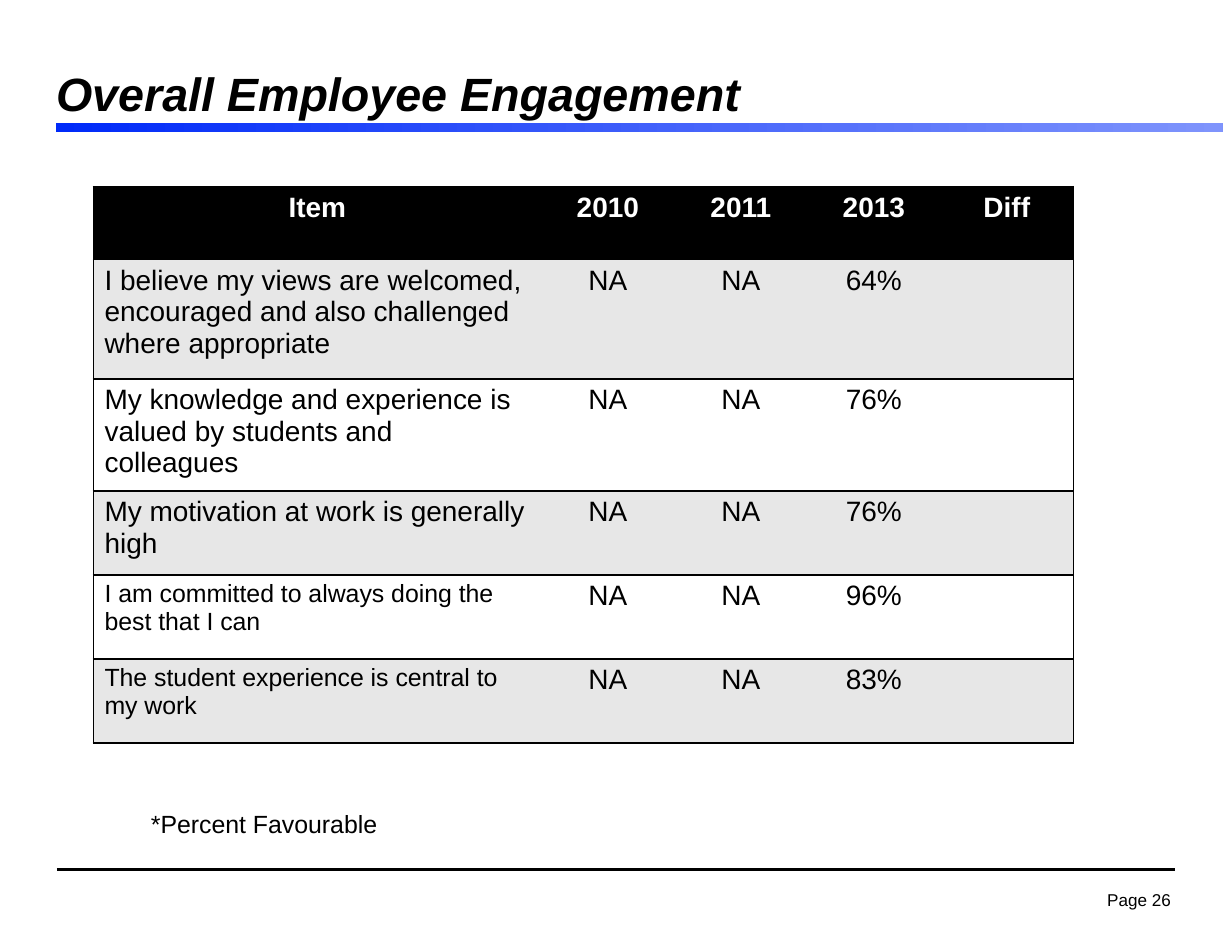
from lxml.etree import SubElement
from pptx import Presentation
from pptx.dml.color import RGBColor
from pptx.enum.shapes import MSO_CONNECTOR, MSO_SHAPE
from pptx.enum.text import MSO_ANCHOR, PP_ALIGN
from pptx.oxml import parse_xml
from pptx.oxml.ns import nsdecls, qn
from pptx.util import Inches, Pt

FONT = "Arial"
COLORS = {
    "black": "000000",
    "white": "FFFFFF",
    "band": "E7E7E7",
    "bar_start": "002AF9",
    "bar_end": "7F94FC",
}
HEADER = ["Item", "2010", "2011", "2013", "Diff"]
# Item, text size, 2013 result
ITEMS = [
    ("I believe my views are welcomed, encouraged and also challenged where appropriate", 18, "64%"),
    ("My knowledge and experience is valued by students and colleagues", 18, "76%"),
    ("My motivation at work is generally high", 18, "76%"),
    ("I am committed to always doing the best that I can", 16, "96%"),
    ("The student experience is central to my work", 16, "83%"),
]
COLUMN_WIDTHS = [48] + [14.25] * 4
ROW_HEIGHTS = [7.8, 12.8, 11.3] + [9] * 3


def grid(*steps):
    """Lengths on a grid with twelve steps to the inch."""
    return [Inches(step / 12) for step in steps]


def color(name):
    return RGBColor.from_string(COLORS[name])


def add_run(paragraph, text, size, color_name="black", bold=False, italic=False):
    run = paragraph.add_run()
    run.text = text
    font = run.font
    font.name, font.size = FONT, Pt(size)
    font.bold, font.italic = bold, italic
    font.color.rgb = color(color_name)


def set_title(slide, text):
    title = slide.shapes.title
    title.left, title.top, title.width, title.height = grid(6, 8, 124, 5)
    frame = title.text_frame
    frame.margin_left = frame.margin_right = frame.margin_top = frame.margin_bottom = 0
    frame.vertical_anchor = MSO_ANCHOR.BOTTOM
    frame.word_wrap = False
    paragraph = frame.paragraphs[0]
    paragraph.alignment = PP_ALIGN.LEFT
    add_run(paragraph, text, 30, bold=True, italic=True)


def add_title_bar(slide):
    bar = slide.shapes.add_shape(MSO_SHAPE.RECTANGLE, *grid(6, 13.2, 125, 1))
    bar.shadow.inherit = False
    bar.line.fill.background()
    bar.fill.gradient()
    bar.fill.gradient_angle = 0
    for stop, name in zip(bar.fill.gradient_stops, ("bar_start", "bar_end")):
        stop.color.rgb = color(name)


def add_footer_line(slide):
    line = slide.shapes.add_connector(MSO_CONNECTOR.STRAIGHT, *grid(6.1, 93.2, 125.9, 93.2))
    line.line.color.rgb = color("black")
    line.line.width = Pt(2)
    SubElement(line._element.spPr, qn("a:effectLst"))


def add_text(slide, box, text, size, alignment=PP_ALIGN.LEFT, wrap=True, spacing=1.0):
    frame = slide.shapes.add_textbox(*grid(*box)).text_frame
    frame.word_wrap = wrap
    paragraph = frame.paragraphs[0]
    paragraph.alignment = alignment
    paragraph.line_spacing = spacing
    add_run(paragraph, text, size)
    return frame


def set_borders(cell, visible_sides):
    properties = cell._tc.get_or_add_tcPr()
    for index, side in enumerate("LRTB"):
        paint = "<a:noFill/>"
        if side in visible_sides:
            paint = f'<a:solidFill><a:srgbClr val="{COLORS["black"]}"/></a:solidFill>'
        border = parse_xml(f'<a:ln{side} {nsdecls("a")} w="{Pt(1)}">{paint}</a:ln{side}>')
        properties.insert(index, border)


def fill_cell(cell, text, size, fill, text_color, alignment, bold):
    cell.fill.solid()
    cell.fill.fore_color.rgb = color(fill)
    if text:
        paragraph = cell.text_frame.paragraphs[0]
        paragraph.alignment = alignment
        add_run(paragraph, text, size, text_color, bold)


def add_results_table(slide):
    box = grid(10, 20, sum(COLUMN_WIDTHS), sum(ROW_HEIGHTS))
    table = slide.shapes.add_table(len(ROW_HEIGHTS), len(COLUMN_WIDTHS), *box).table
    for column, width in zip(table.columns, grid(*COLUMN_WIDTHS)):
        column.width = width
    for row, height in zip(table.rows, grid(*ROW_HEIGHTS)):
        row.height = height

    sizes = [18] + [size for _, size, _ in ITEMS]
    rows = [HEADER] + [[item, "NA", "NA", result, ""] for item, _, result in ITEMS]
    last_column = len(HEADER) - 1
    for row_index, values in enumerate(rows):
        is_header = row_index == 0
        fill = "black" if is_header else "band" if row_index % 2 else "white"
        for column_index, text in enumerate(values):
            is_item = column_index == 0 and not is_header
            cell = table.cell(row_index, column_index)
            fill_cell(
                cell, text,
                size=sizes[row_index] if is_item else 18,
                fill=fill,
                text_color="white" if is_header else "black",
                alignment=PP_ALIGN.LEFT if is_item else PP_ALIGN.CENTER,
                bold=is_header,
            )
            # Only the outer frame has vertical lines
            set_borders(cell, "TB" + {0: "L", last_column: "R"}.get(column_index, ""))


def main():
    presentation = Presentation()
    presentation.slide_width, presentation.slide_height = Inches(11), Inches(8.5)
    slide = presentation.slides.add_slide(presentation.slide_layouts[5])

    # Page frame
    add_footer_line(slide)
    page = add_text(slide, (117.1, 94.8, 9.7, 3.4), "Page 26", 11, PP_ALIGN.RIGHT, False, 0.9)
    page.margin_left = page.margin_right = Inches(0.11)
    page.margin_top = page.margin_bottom = Inches(0.06)
    add_title_bar(slide)
    set_title(slide, "Overall Employee Engagement")

    # Results and footnote
    add_results_table(slide)
    add_text(slide, (15, 86, 43, 4.4), "*Percent Favourable", 16)

    presentation.save("out.pptx")


if __name__ == "__main__":
    main()
